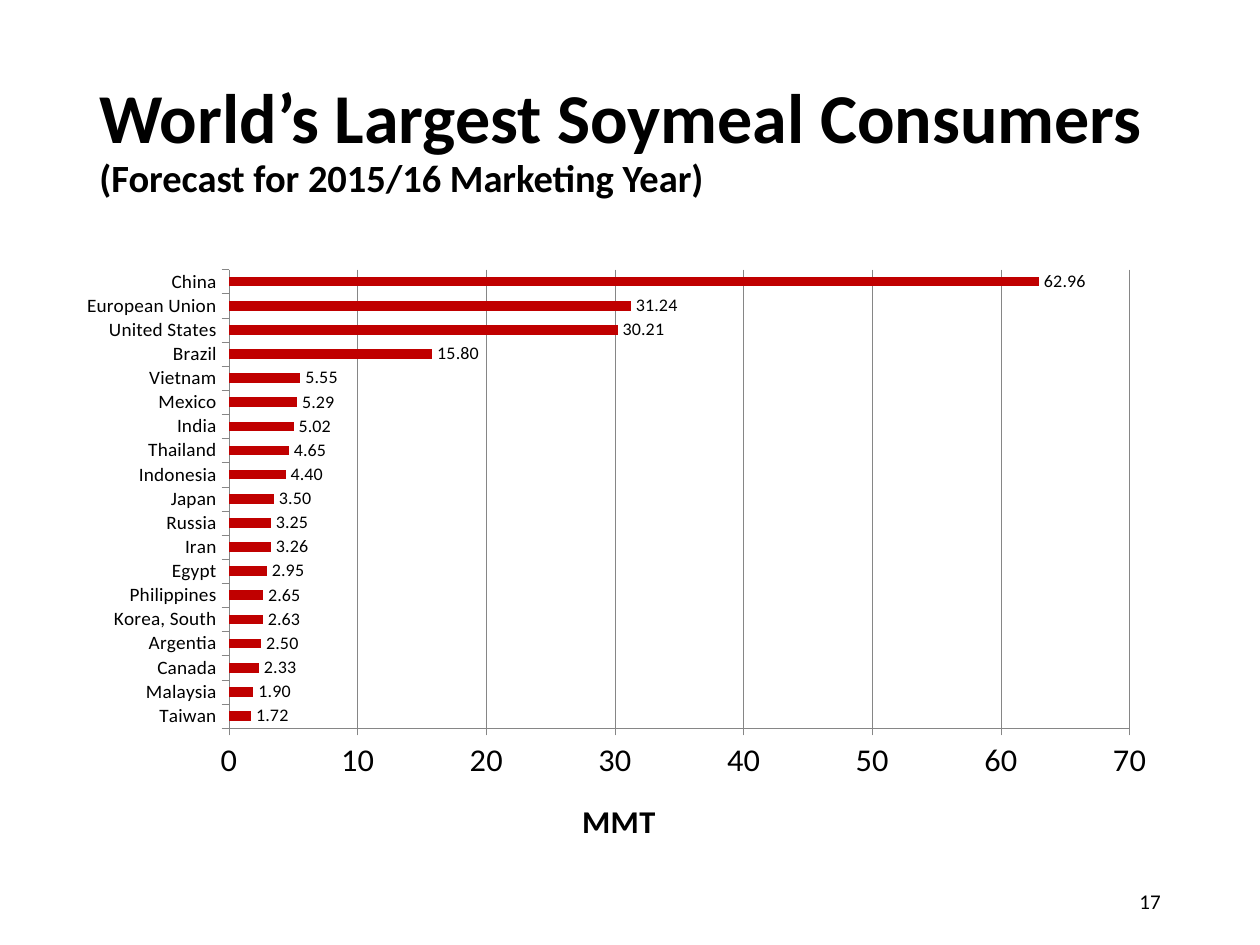
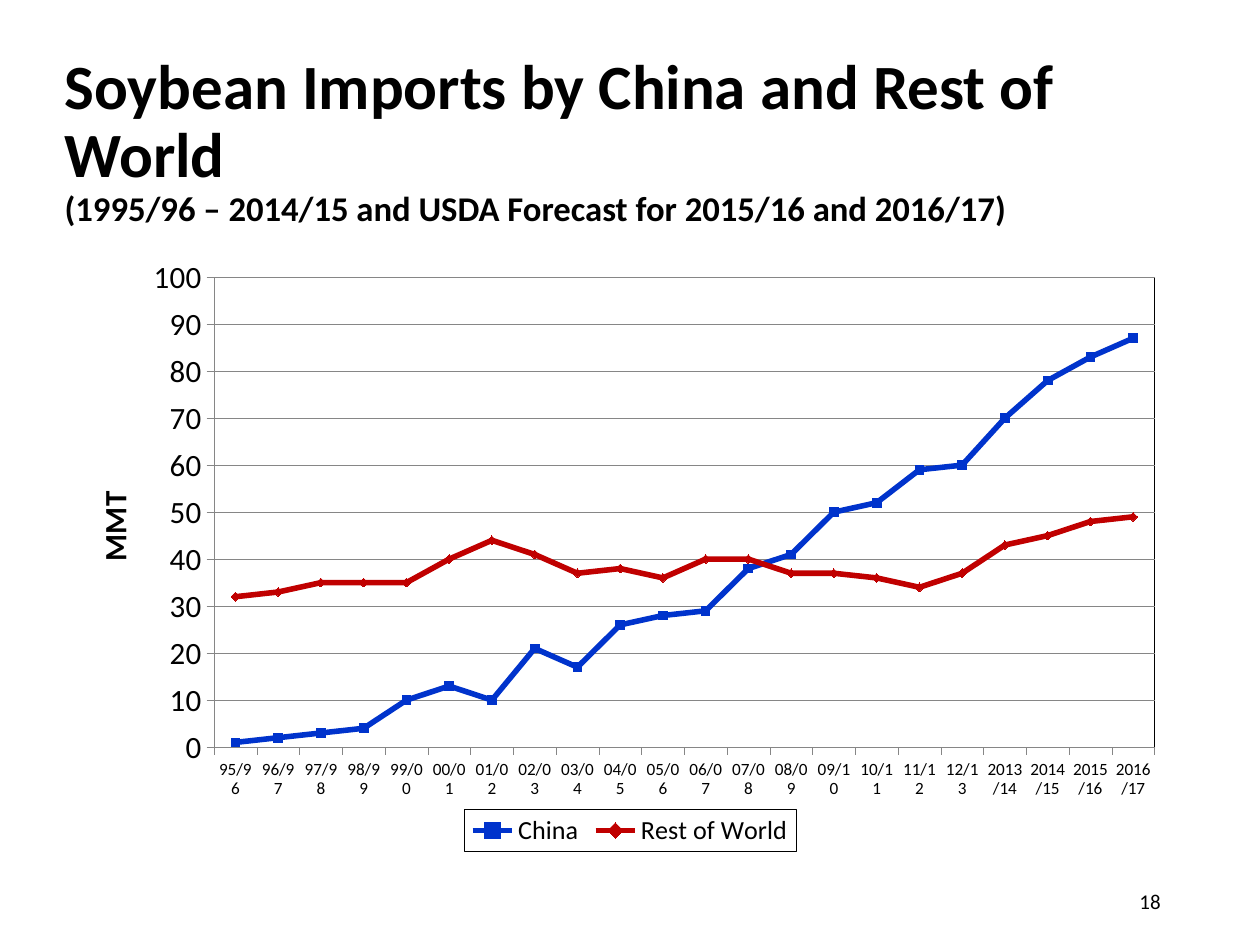
from lxml.etree import SubElement
from pptx import Presentation
from pptx.chart.data import CategoryChartData
from pptx.dml.color import RGBColor
from pptx.enum.chart import (XL_CHART_TYPE, XL_LABEL_POSITION, XL_LEGEND_POSITION,
                             XL_MARKER_STYLE, XL_TICK_MARK)
from pptx.enum.text import MSO_ANCHOR, PP_ALIGN
from pptx.oxml import parse_xml
from pptx.oxml.ns import nsdecls, qn
from pptx.util import Inches, Pt

FONT = "Calibri"
BLACK, GRID, RED, BLUE = "000000", "868686", "C00000", "0033CC"
HAIRLINE = Pt(0.25)

CONSUMPTION = {
    "Taiwan": 1.72, "Malaysia": 1.9, "Canada": 2.33, "Argentia": 2.5,
    "Korea, South": 2.63, "Philippines": 2.65, "Egypt": 2.95, "Iran": 3.26,
    "Russia": 3.25, "Japan": 3.5, "Indonesia": 4.4, "Thailand": 4.65,
    "India": 5.02, "Mexico": 5.29, "Vietnam": 5.55, "Brazil": 15.8,
    "United States": 30.21, "European Union": 31.24, "China": 62.96,
}
SEASONS = [f"{year % 100:02}/{(year + 1) % 100:02}" for year in range(1995, 2013)]
SEASONS += [f"{year}/{(year + 1) % 100}" for year in range(2013, 2017)]
IMPORTS = {
    "China": [1, 2, 3, 4, 10, 13, 10, 21, 17, 26, 28, 29, 38, 41, 50, 52, 59, 60,
              70, 78, 83, 87],
    "Rest of World": [32, 33, 35, 35, 35, 40, 44, 41, 37, 38, 36, 40, 40, 37, 37,
                      36, 34, 37, 43, 45, 48, 49],
}


def rgb(value):
    return RGBColor.from_string(value)


def style_font(font, size, bold=False, color=BLACK):
    font.name, font.size, font.bold = FONT, Pt(size), bold
    font.color.rgb = rgb(color)


def style_line(line, color, width=HAIRLINE):
    line.color.rgb = rgb(color)
    line.width = width


def add_text(paragraph, text, **font_format):
    run = paragraph.add_run()
    run.text = text
    style_font(run.font, **font_format)


def set_layout(parent, inner=False, **fractions):
    """Place a chart part by fractions of the chart's width and height."""
    layout = parent.find(qn("c:layout"))
    if layout is None:
        layout = parse_xml(f"<c:layout {nsdecls('c')}/>")
        parent.insert(0, layout)
    for child in list(layout):
        layout.remove(child)
    manual = SubElement(layout, qn("c:manualLayout"))
    if inner:
        SubElement(manual, qn("c:layoutTarget"), val="inner")
    for mode in ("xMode", "yMode"):
        SubElement(manual, qn(f"c:{mode}"), val="edge")
    for key, fraction in fractions.items():
        SubElement(manual, qn(f"c:{key}"), val=str(fraction))


def black_outline():
    return parse_xml(
        f'<c:spPr {nsdecls("c", "a")}><a:noFill/><a:ln w="{HAIRLINE}"><a:solidFill>'
        f'<a:srgbClr val="{BLACK}"/></a:solidFill></a:ln></c:spPr>')


class Deck:
    """Holds the presentation, its style and the slide being filled."""

    def __init__(self):
        self.presentation = Presentation()
        self.presentation.slide_width = Inches(10)
        self.presentation.slide_height = Inches(7.5)
        self.slide = None

    def new_slide(self, number):
        layout = self.presentation.slide_layouts[6]
        self.slide = self.presentation.slides.add_slide(layout)
        footer = self.text_box(7.06, 6.95, 2.25, 0.4)
        footer.alignment = PP_ALIGN.RIGHT
        add_text(footer, str(number), size=12)

    def text_box(self, left, top, width, height):
        """Add a middle-anchored box and return its first paragraph."""
        box = self.slide.shapes.add_textbox(
            Inches(left), Inches(top), Inches(width), Inches(height))
        frame = box.text_frame
        frame.word_wrap = True
        frame.vertical_anchor = MSO_ANCHOR.MIDDLE
        return frame.paragraphs[0]

    def title(self, heading, subtitle, size, width):
        paragraph = self.text_box((10 - width) / 2, 0.4, width, 1.45)
        paragraph.line_spacing = 0.9
        add_text(paragraph, heading, size=size, bold=True)
        paragraph.add_line_break()
        add_text(paragraph, subtitle, size=size * 0.55, bold=True)

    def chart(self, kind, categories, series, size, category_size, maximum, plot,
              unit_at):
        """Add a chart with an MMT value axis; plot and unit_at are fractions."""
        data = CategoryChartData()
        data.categories = categories
        for name, values in series.items():
            data.add_series(name, values)
        chart = self.slide.shapes.add_chart(
            kind, Inches(0.69), Inches(2), Inches(8.62), Inches(4.76), data).chart
        chart.has_title = False
        chart.has_legend = False
        style_font(chart.font, size)
        chart.plots[0].vary_by_categories = False

        value_axis = chart.value_axis
        value_axis.minimum_scale, value_axis.maximum_scale = 0, maximum
        value_axis.major_unit = 10
        value_axis.has_major_gridlines = True
        style_line(value_axis.major_gridlines.format.line, GRID)
        value_axis.tick_labels.number_format = "General"
        value_axis.tick_labels.number_format_is_linked = False
        for axis, axis_size in ((value_axis, size), (chart.category_axis, category_size)):
            axis.major_tick_mark = XL_TICK_MARK.OUTSIDE
            axis.minor_tick_mark = XL_TICK_MARK.NONE
            style_line(axis.format.line, GRID)
            style_font(axis.tick_labels.font, axis_size)
            # Level labels wrap instead of slanting
            axis._element.find(qn("c:txPr")).find(qn("a:bodyPr")).set("rot", "0")

        unit = value_axis.axis_title
        add_text(unit.text_frame.paragraphs[0], "MMT", size=size, bold=True)
        set_layout(unit._element, x=unit_at[0], y=unit_at[1])
        set_layout(chart._chartSpace.chart.plotArea, inner=True,
                   **dict(zip("xywh", plot)))
        return chart

    def bar_chart(self, values, color, **options):
        chart = self.chart(XL_CHART_TYPE.BAR_CLUSTERED, list(values),
                           {"Series 1": list(values.values())}, **options)
        bars = chart.plots[0]
        bars.gap_width = 150
        fill = bars.series[0].format.fill
        fill.solid()
        fill.fore_color.rgb = rgb(color)
        labels = bars.series[0].data_labels
        labels.show_value = True
        labels.number_format = "#,##0.00"
        labels.number_format_is_linked = False
        labels.position = XL_LABEL_POSITION.OUTSIDE_END
        style_font(labels.font, 10.3)

    def line_chart(self, categories, series, looks, **options):
        """Draw one line per series; looks pairs a colour with a marker style."""
        chart = self.chart(XL_CHART_TYPE.LINE_MARKERS, categories, series, **options)
        for line, (color, marker) in zip(chart.plots[0].series, looks):
            line.smooth = False
            style_line(line.format.line, color, Pt(3.18))
            line.marker.style, line.marker.size = marker, 5
            line.marker.format.fill.solid()
            line.marker.format.fill.fore_color.rgb = rgb(color)
            line.marker.format.line.color.rgb = rgb(color)
        chart._chartSpace.chart.plotArea.append(black_outline())

        chart.has_legend = True
        legend = chart.legend
        legend.position = XL_LEGEND_POSITION.BOTTOM
        legend.include_in_layout = False
        style_font(legend.font, 14.9)
        legend._element.find(qn("c:txPr")).addprevious(black_outline())


def main():
    deck = Deck()

    deck.new_slide(17)
    deck.title("World’s Largest Soymeal Consumers",
               "(Forecast for 2015/16 Marketing Year)", size=40, width=8.62)
    deck.bar_chart(CONSUMPTION, RED, size=18.5, category_size=11, maximum=70,
                   plot=(0.13, 0.03, 0.83, 0.78), unit_at=(0.45, 0.92))

    deck.new_slide(18)
    deck.title("Soybean Imports by China and Rest of World",
               "(1995/96 – 2014/15 and USDA Forecast for 2015/16 and 2016/17)",
               size=36, width=9.17)
    deck.line_chart(SEASONS, IMPORTS,
                    [(BLUE, XL_MARKER_STYLE.SQUARE), (RED, XL_MARKER_STYLE.DIAMOND)],
                    size=17.7, category_size=9.8, maximum=100,
                    plot=(0.117, 0.042, 0.866, 0.784), unit_at=(0, 0.39))

    deck.presentation.save("out.pptx")


if __name__ == "__main__":
    main()
